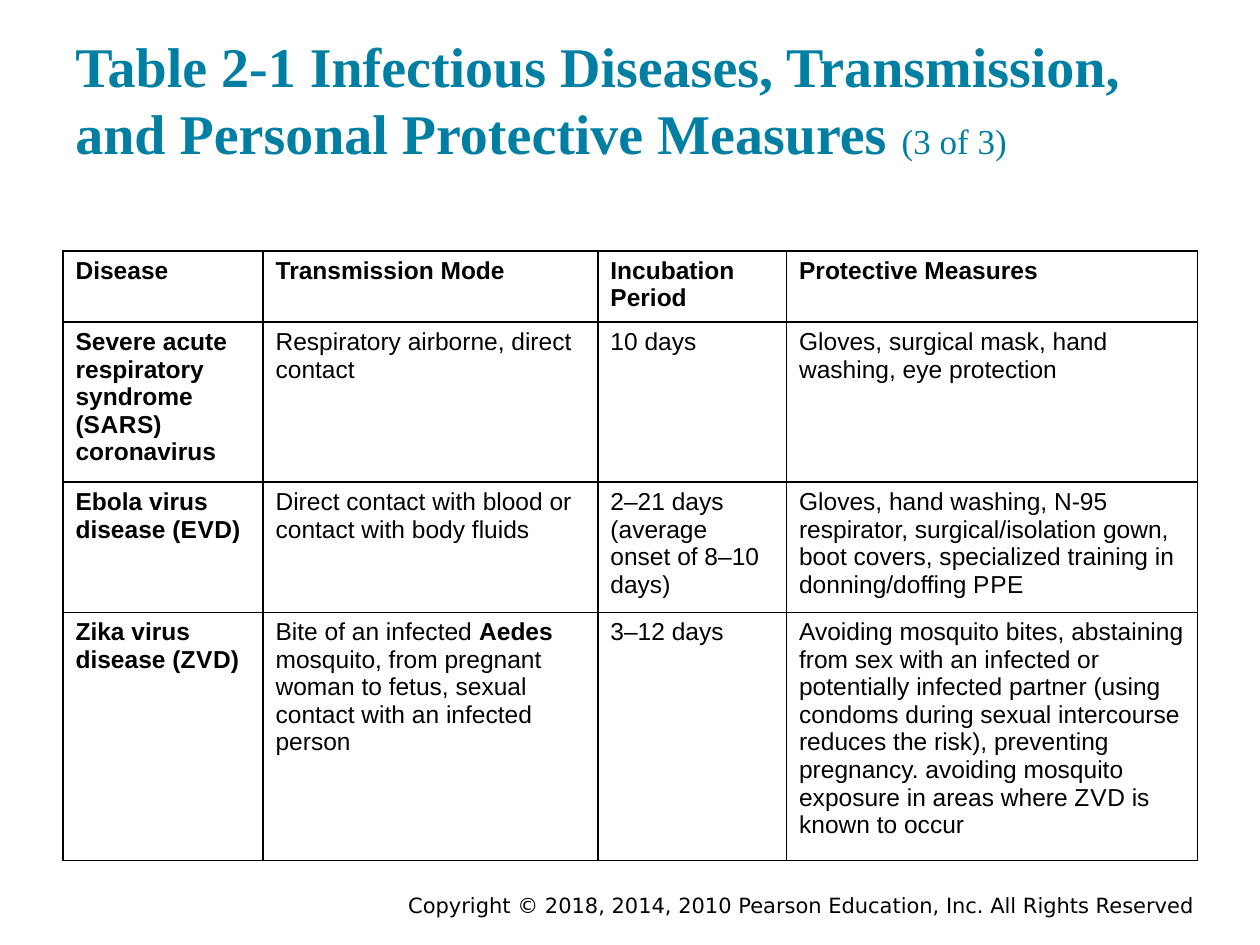
import pptx
import pptx.dml.color
import pptx.enum.text
import pptx.oxml
import pptx.oxml.ns
import pptx.util

SLIDE_WIDTH = pptx.util.Inches(10)
SLIDE_HEIGHT = pptx.util.Inches(7.5)
GRID_COLUMNS, GRID_ROWS = 40, 30

COLORS = {"title": "007FA3", "text": "000000", "border": "000000"}
TITLE_FONT = {"name": "Times New Roman", "size": pptx.util.Pt(32), "bold": True}
COUNTER_FONT = {"name": "Times New Roman", "size": pptx.util.Pt(20), "bold": False}
TABLE_FONT = {"name": "Arial", "size": pptx.util.Pt(14)}
COPYRIGHT_FONT = {"name": "DejaVu Sans", "size": pptx.util.Pt(12), "bold": False}
BOLD_MARK, THIN_SPACE_MARK = "**", "~"
THIN_SPACE_SIZE = pptx.util.Pt(1)

COLUMN_WIDTHS = [6.35, 10.63, 5.99, 13.05]
ROW_HEIGHTS = [0.64, 1.4, 1.12, 2.16]
HEADERS = ["Disease", "Transmission Mode", "Incubation Period", "Protective Measures"]
DISEASES = [
    ["Severe acute\nrespiratory syndrome\n(S~A~R~S) coronavirus",
     "Respiratory airborne, direct contact",
     "10 days",
     "Gloves, surgical mask, hand washing, eye protection"],
    ["Ebola virus disease (E~V~D)",
     "Direct contact with blood or contact with body fluids",
     "2–21 days (average onset of 8–10 days)",
     "Gloves, hand washing, N-95 respirator, surgical/isolation gown, "
     "boot covers, specialized training in donning/doffing P~P~E"],
    ["Zika virus disease (Z~V~D)",
     "Bite of an infected **Aedes **mosquito, from pregnant woman to fetus, "
     "sexual contact with an infected person",
     "3–12 days",
     "Avoiding mosquito bites, abstaining from sex with an infected or "
     "potentially infected partner (using condoms during sexual intercourse "
     "reduces the risk), preventing pregnancy. avoiding mosquito exposure in "
     "areas where Z~V~D is known to occur"],
]


def across(columns):
    return round(SLIDE_WIDTH * columns / GRID_COLUMNS)


def down(rows):
    return round(SLIDE_HEIGHT * rows / GRID_ROWS)


def place(box):
    left, top, width, height = box
    return across(left), down(top), across(width), down(height)


def set_attributes(target, values):
    for name, value in values.items():
        setattr(target, name, value)


def add_run(paragraph, text, font, color):
    run = paragraph.add_run()
    run.text = text
    set_attributes(run.font, font)
    run.font.color.rgb = pptx.dml.color.RGBColor.from_string(COLORS[color])


def add_text_frame(slide, box, values):
    text_frame = slide.shapes.add_textbox(*place(box)).text_frame
    set_attributes(text_frame, {"word_wrap": True, **values})
    return text_frame


def draw_title(slide, box):
    inset = pptx.util.Inches(0.1)
    text_frame = add_text_frame(slide, box, {
        "vertical_anchor": pptx.enum.text.MSO_ANCHOR.BOTTOM,
        "margin_top": inset, "margin_bottom": inset})
    paragraph = text_frame.paragraphs[0]
    add_run(paragraph, "Table 2-1 Infectious Diseases, Transmission, "
            "and Personal Protective Measures ", TITLE_FONT, "title")
    add_run(paragraph, "(3 of 3)", COUNTER_FONT, "title")


def draw_borders(cell):
    properties = cell._tc.get_or_add_tcPr()
    for position, side in enumerate(("lnL", "lnR", "lnT", "lnB")):
        properties.insert(position, pptx.oxml.parse_xml(
            f'<a:{side} {pptx.oxml.ns.nsdecls("a")} w="{pptx.util.Pt(1)}">'
            f'<a:solidFill><a:srgbClr val="{COLORS["border"]}"/></a:solidFill>'
            f'</a:{side}>'))


def add_marked_line(paragraph, line, bold):
    for part, words in enumerate(line.split(BOLD_MARK)):
        font = {**TABLE_FONT, "bold": bold or part % 2 == 1}
        for index, piece in enumerate(words.split(THIN_SPACE_MARK)):
            if index:
                add_run(paragraph, " ", {**font, "size": THIN_SPACE_SIZE}, "text")
            add_run(paragraph, piece, font, "text")


def fill_cell(cell, text, bold):
    cell.fill.background()
    draw_borders(cell)
    text_frame = cell.text_frame
    for index, line in enumerate(text.split("\n")):
        paragraph = text_frame.add_paragraph() if index else text_frame.paragraphs[0]
        add_marked_line(paragraph, line, bold)


def draw_disease_table(slide, box):
    contents = [HEADERS] + DISEASES
    table = slide.shapes.add_table(len(contents), len(HEADERS), *place(box)).table
    set_attributes(table, {"first_row": False, "horz_banding": False})
    for column, width in zip(table.columns, COLUMN_WIDTHS):
        column.width = across(width)
    for row, height in zip(table.rows, ROW_HEIGHTS):
        row.height = down(height)
    for row_index, texts in enumerate(contents):
        for column_index, text in enumerate(texts):
            bold = row_index == 0 or column_index == 0
            fill_cell(table.cell(row_index, column_index), text, bold)


def draw_copyright(slide, box):
    text_frame = add_text_frame(slide, box, {
        "vertical_anchor": pptx.enum.text.MSO_ANCHOR.MIDDLE})
    paragraph = text_frame.paragraphs[0]
    paragraph.alignment = pptx.enum.text.PP_ALIGN.RIGHT
    add_run(paragraph, "Copyright © 2018, 2014, 2010 Pearson Education, Inc. "
            "All Rights Reserved", COPYRIGHT_FONT, "text")


def main():
    presentation = pptx.Presentation()
    set_attributes(presentation, {"slide_width": SLIDE_WIDTH, "slide_height": SLIDE_HEIGHT})
    slide = presentation.slides.add_slide(presentation.slide_layouts[6])
    draw_title(slide, (2, 1, 36, 4.66))
    draw_disease_table(slide, (2, 7.96, sum(COLUMN_WIDTHS), sum(ROW_HEIGHTS)))
    draw_copyright(slide, (11.68, 28.22, 26.64, 1))
    presentation.save("out.pptx")


if __name__ == "__main__":
    main()
